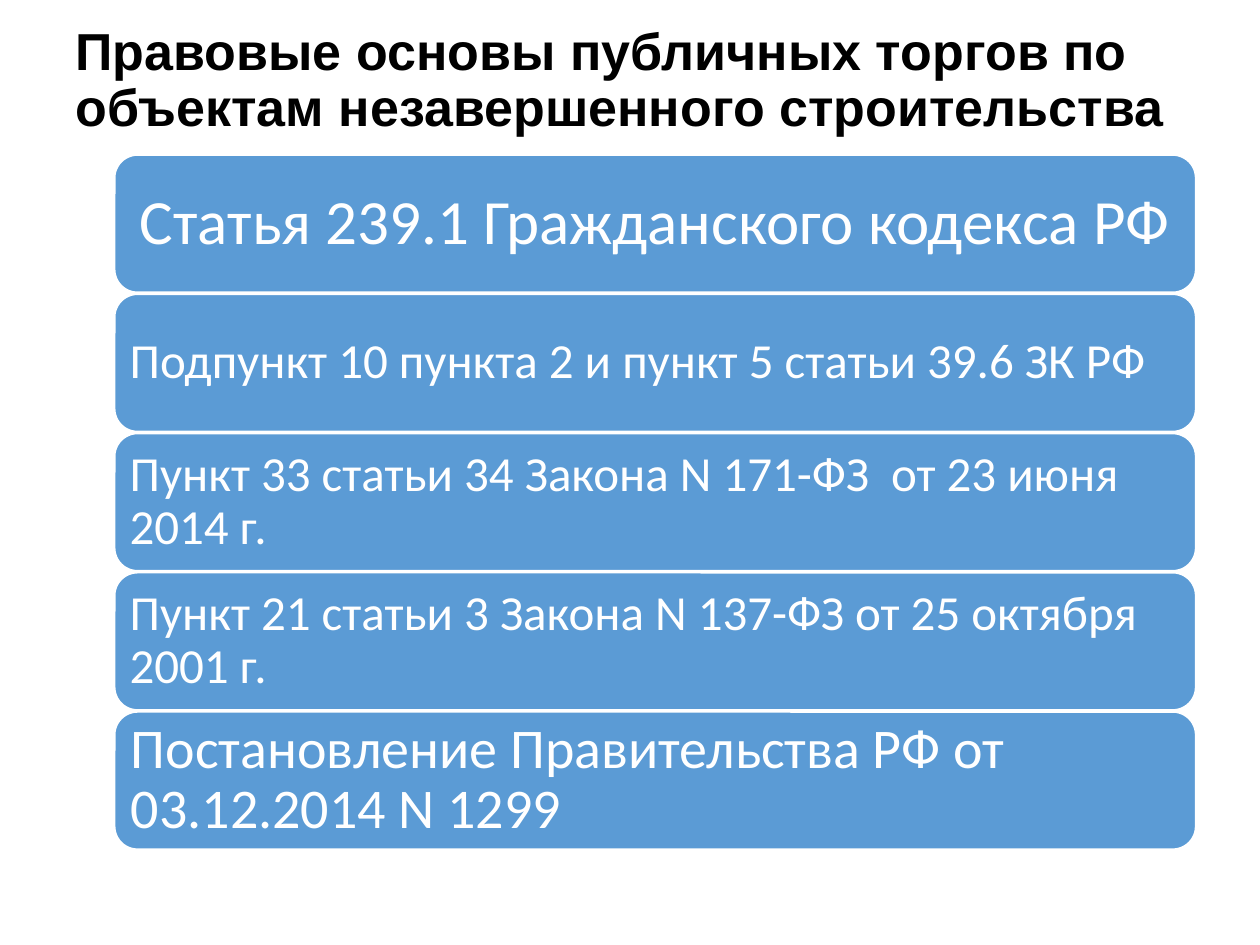
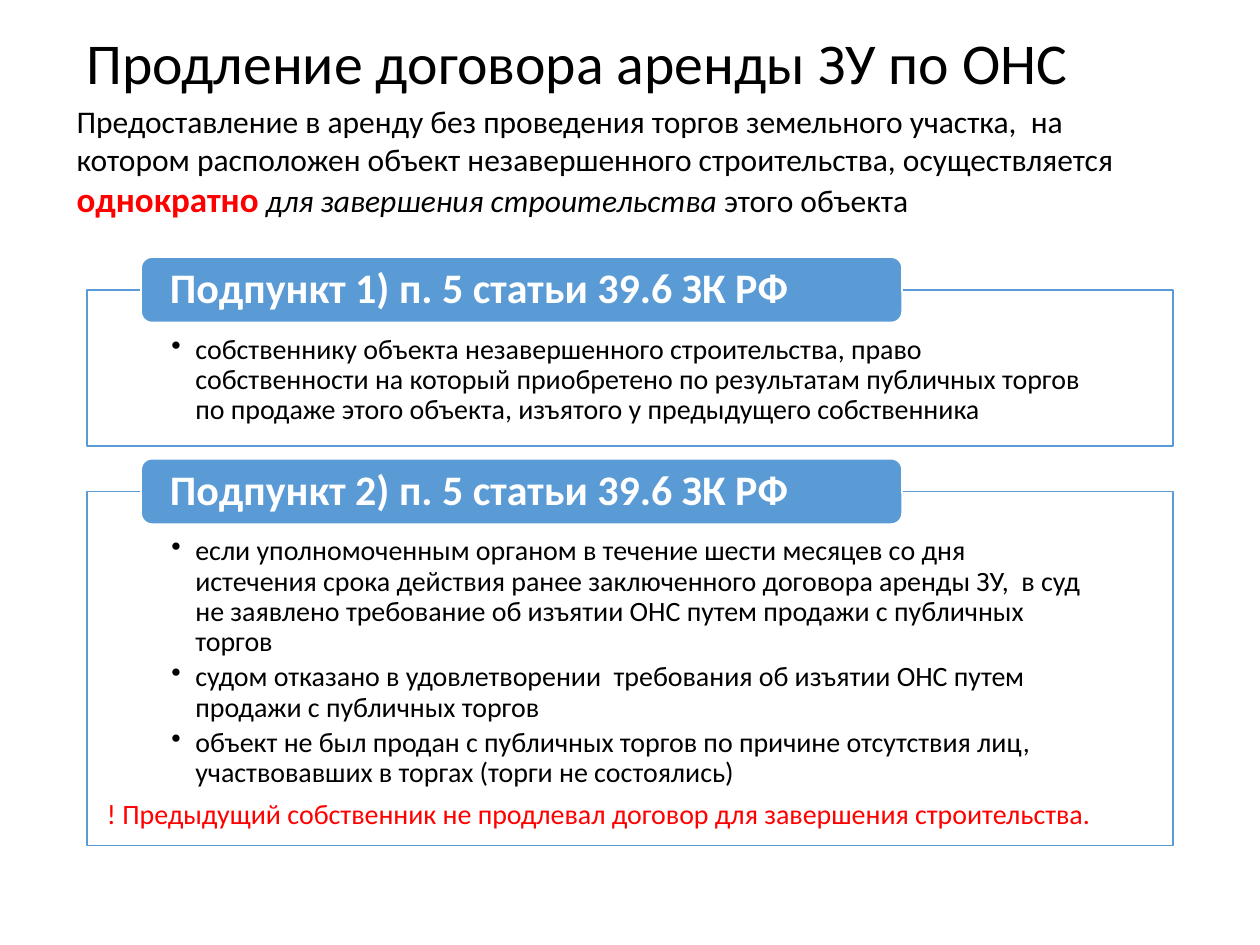
from dataclasses import dataclass
from lxml import etree
from pptx import Presentation
from pptx.dml.color import RGBColor
from pptx.enum.shapes import MSO_SHAPE
from pptx.enum.text import MSO_ANCHOR, PP_ALIGN
from pptx.oxml.ns import qn
from pptx.util import Inches, Pt

# Shared colours, fonts and enum members
BLUE = RGBColor(0x5B, 0x9B, 0xD5)
WHITE = RGBColor(0xFF, 0xFF, 0xFF)
BLACK = RGBColor(0, 0, 0)
RED = RGBColor(0xFF, 0, 0)
BODY, HEAD = "Calibri", "Arial"
ROUND, RECT = MSO_SHAPE.ROUNDED_RECTANGLE, MSO_SHAPE.RECTANGLE
TOP, MID = MSO_ANCHOR.TOP, MSO_ANCHOR.MIDDLE
LEFT, MIDDLE = PP_ALIGN.LEFT, PP_ALIGN.CENTER

# The slide is a grid of 100 columns by 75 rows
WIDE, HIGH = Inches(10), Inches(7.5)
COL, ROW = WIDE / 100, HIGH / 75
TIGHT = 0.9
CURVE = 0.05  # share of its height by which a round box insets its text


@dataclass(frozen=True)
class Box:
    x: float
    y: float
    w: float
    h: float

    def place(self) -> tuple[int, int, int, int]:
        return (round(self.x * COL), round(self.y * ROW),
                round(self.w * COL), round(self.h * ROW))


@dataclass(frozen=True)
class Bit:
    text: str
    size: float
    color: RGBColor = BLACK
    bold: bool = False
    italic: bool = False
    name: str = BODY


@dataclass(frozen=True)
class Bar:
    text: str
    size: float
    pad: float = 1.2
    align: int = LEFT


@dataclass(frozen=True)
class Panel:
    head: str
    y: float
    h: float
    points: tuple[str, ...]


BARS = (
    Bar("Статья 239.1 Гражданского кодекса РФ ", 36, 1.5, MIDDLE),
    Bar("Подпункт 10 пункта 2 и пункт 5 статьи 39.6 ЗК РФ", 28),
    Bar("Пункт 33 статьи 34 Закона N 171-ФЗ  от 23 июня 2014 г.", 28),
    Bar("Пункт 21 статьи 3 Закона N 137-ФЗ от 25 октября 2001 г.", 28),
    Bar("Постановление Правительства РФ от 03.12.2014 N 1299", 32, 1.3),
)
PANELS = (
    Panel("Подпункт 1) п. 5 статьи 39.6 ЗК РФ", 23, 12.4, (
        "собственнику объекта незавершенного строительства, право "
        "собственности на который приобретено по результатам публичных "
        "торгов по продаже этого объекта, изъятого у предыдущего "
        "собственника",)),
    Panel("Подпункт 2) п. 5 статьи 39.6 ЗК РФ", 39, 28.1, (
        "если уполномоченным органом в течение шести месяцев со дня "
        "истечения срока действия ранее заключенного договора аренды ЗУ,  "
        "в суд не заявлено требование об изъятии ОНС путем продажи с "
        "публичных торгов",
        "судом отказано в удовлетворении  требования об изъятии ОНС путем "
        "продажи с публичных торгов",
        "объект не был продан с публичных торгов по причине отсутствия "
        "лиц, участвовавших в торгах (торги не состоялись)")),
)
LEAD = (
    Bit("Предоставление в аренду без проведения торгов земельного участка,  "
        "на котором расположен объект незавершенного строительства, "
        "осуществляется ", 18),
    Bit("однократно", 20, RED, bold=True),
    Bit(" ", 18),
    Bit("для завершения строительства ", 18, italic=True),
    Bit("этого объекта", 18),
)
NOTE = Bit("! Предыдущий собственник не продлевал договор для завершения "
           "строительства.", 16, RED)


def write(shape, paras, anchor=TOP, pads=(1, 0.5, 1, 0.5), align=LEFT,
          lead=1.0) -> None:
    """Fill a shape with paragraphs of bits; pads: left, top, right, bottom."""
    frame = shape.text_frame
    form = {"word_wrap": True, "vertical_anchor": anchor}
    sides = ("margin_left", "margin_top", "margin_right", "margin_bottom")
    form |= {side: round(pad * COL) for side, pad in zip(sides, pads)}
    for key, val in form.items():
        setattr(frame, key, val)
    for i, bits in enumerate(paras):
        para = frame.add_paragraph() if i else frame.paragraphs[0]
        para.alignment, para.line_spacing = align, lead
        for bit in bits:
            run = para.add_run()
            run.text = bit.text
            font = {"size": Pt(bit.size), "bold": bit.bold,
                    "italic": bit.italic, "name": bit.name}
            for key, val in font.items():
                setattr(run.font, key, val)
            run.font.color.rgb = bit.color


def label(slide, box: Box, bits, **form) -> None:
    write(slide.shapes.add_textbox(*box.place()), [bits], **form)


def title(slide, box: Box, bit: Bit) -> None:
    label(slide, box, [bit], anchor=MID, lead=TIGHT)


def block(slide, kind, box: Box, fill: RGBColor, edge: RGBColor):
    shape = slide.shapes.add_shape(kind, *box.place())
    shape.shadow.inherit = False
    shape.fill.solid()
    shape.fill.fore_color.rgb = fill
    shape.line.color.rgb = edge
    shape.line.width = Pt(1)
    return shape


def pill(slide, box: Box, bit: Bit, side: float, end: float,
         align=LEFT) -> None:
    """Round blue box with white text."""
    inset = CURVE * box.h
    side, end = side - inset, max(0, end - inset)
    write(block(slide, ROUND, box, BLUE, WHITE), [[bit]], MID,
          (side, end, side, end), align, TIGHT)


def bullet(para) -> None:
    para.space_after = Pt(3)
    props = para._p.get_or_add_pPr()
    props.set("marL", str(Inches(0.19)))
    props.set("indent", str(-Inches(0.19)))
    etree.SubElement(props, qn("a:buChar")).set("char", "•")


def panel(slide, part: Panel) -> None:
    """Outlined list with a heading across its upper edge."""
    shape = block(slide, RECT, Box(6.9, part.y, 86.2, part.h), WHITE, BLUE)
    tint = shape._element.spPr.find(qn("a:solidFill"))[0]
    etree.SubElement(tint, qn("a:alpha")).set("val", "90000")
    write(shape, [[Bit(point, 16)] for point in part.points],
          pads=(6.7, 3.6, 6.7, 1.2), lead=TIGHT)
    for para in shape.text_frame.paragraphs:
        bullet(para)
    tall = 5.2
    pill(slide, Box(11.2, part.y - tall / 2, 60.4, tall),
         Bit(part.head, 24, WHITE, bold=True), 2.3, 0)


def basis(slide) -> None:
    title(slide, Box(5, 3, 90, 6.9),
          Bit("Правовые основы публичных торгов по объектам незавершенного "
              "строительства", 29.7, bold=True, name=HEAD))
    for i, bar in enumerate(BARS):
        pill(slide, Box(9.1, 12.3 + 11.05 * i, 85.8, 10.9),
             Bit(bar.text, bar.size, WHITE), bar.pad, bar.pad, bar.align)


def renew(slide) -> None:
    title(slide, Box(5.9, 1.3, 86.2, 7.8),
          Bit("Продление договора аренды ЗУ по ОНС", 33))
    for part in PANELS:
        panel(slide, part)
    label(slide, Box(5.1, 7.6, 87.4, 10.4), LEAD)
    label(slide, Box(7.5, 62.7, 83.5, 3.7), [NOTE])


def main() -> None:
    deck = Presentation()
    deck.slide_width, deck.slide_height = WIDE, HIGH
    for draw in (basis, renew):
        draw(deck.slides.add_slide(deck.slide_layouts[6]))
    deck.save("out.pptx")


if __name__ == "__main__":
    main()
